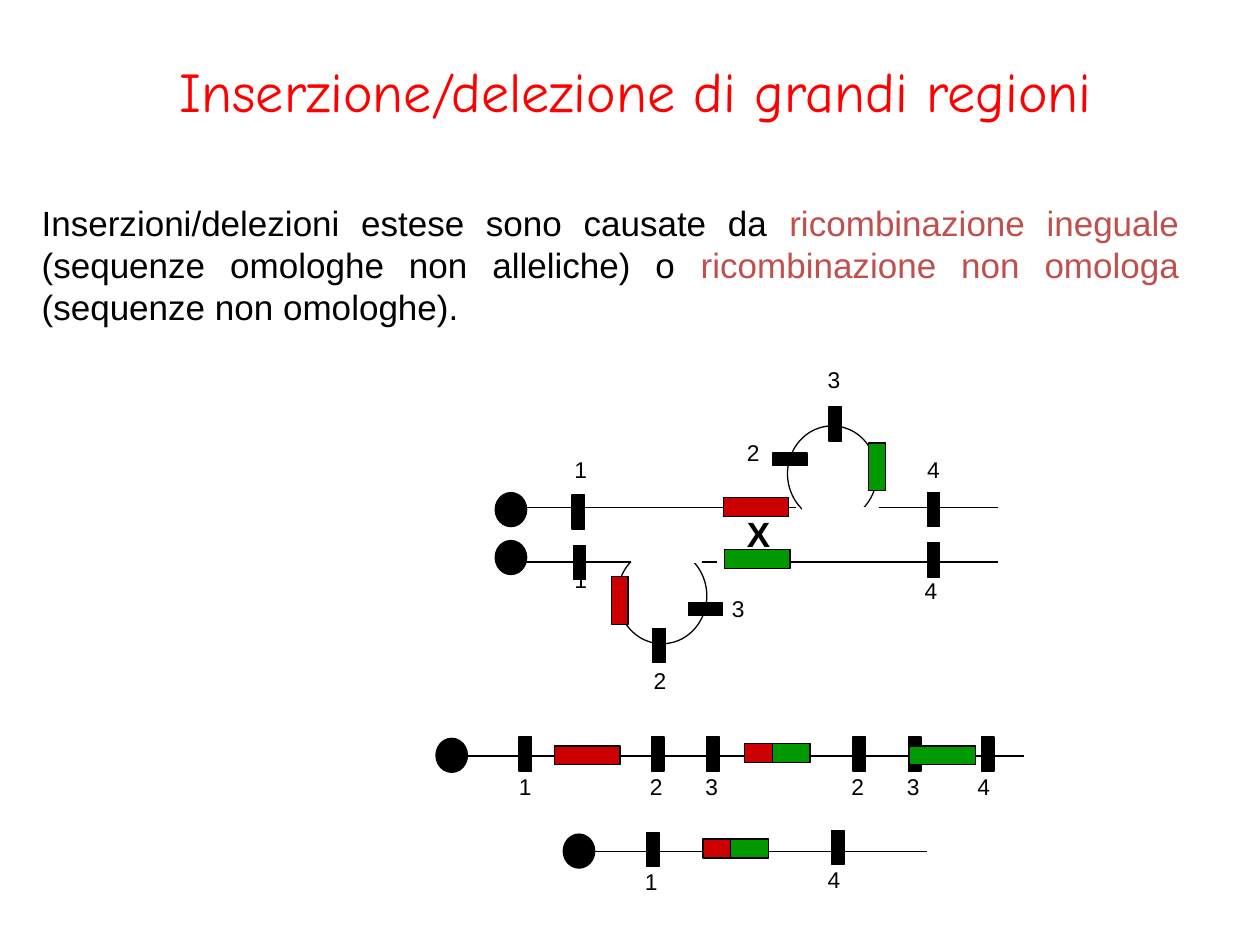
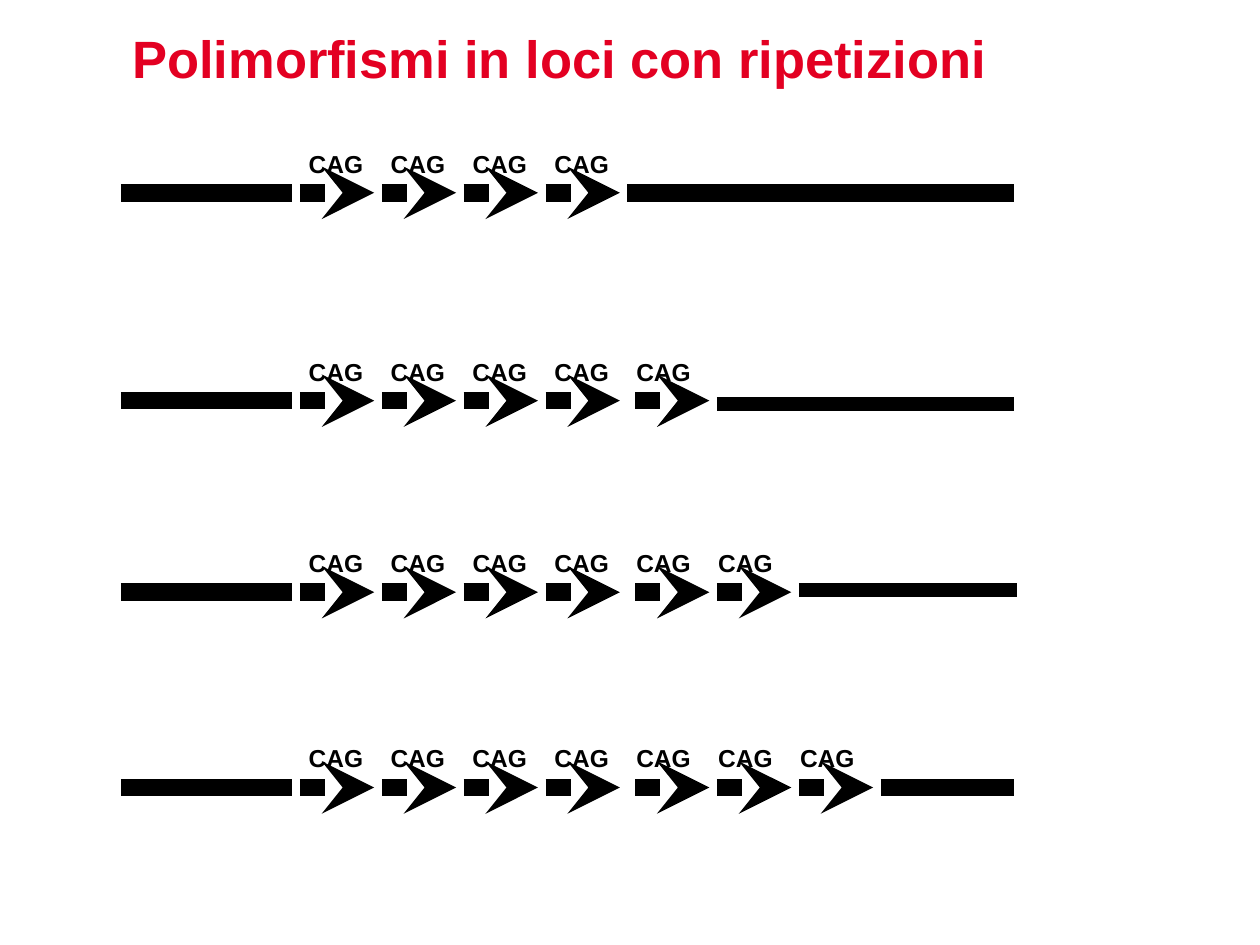
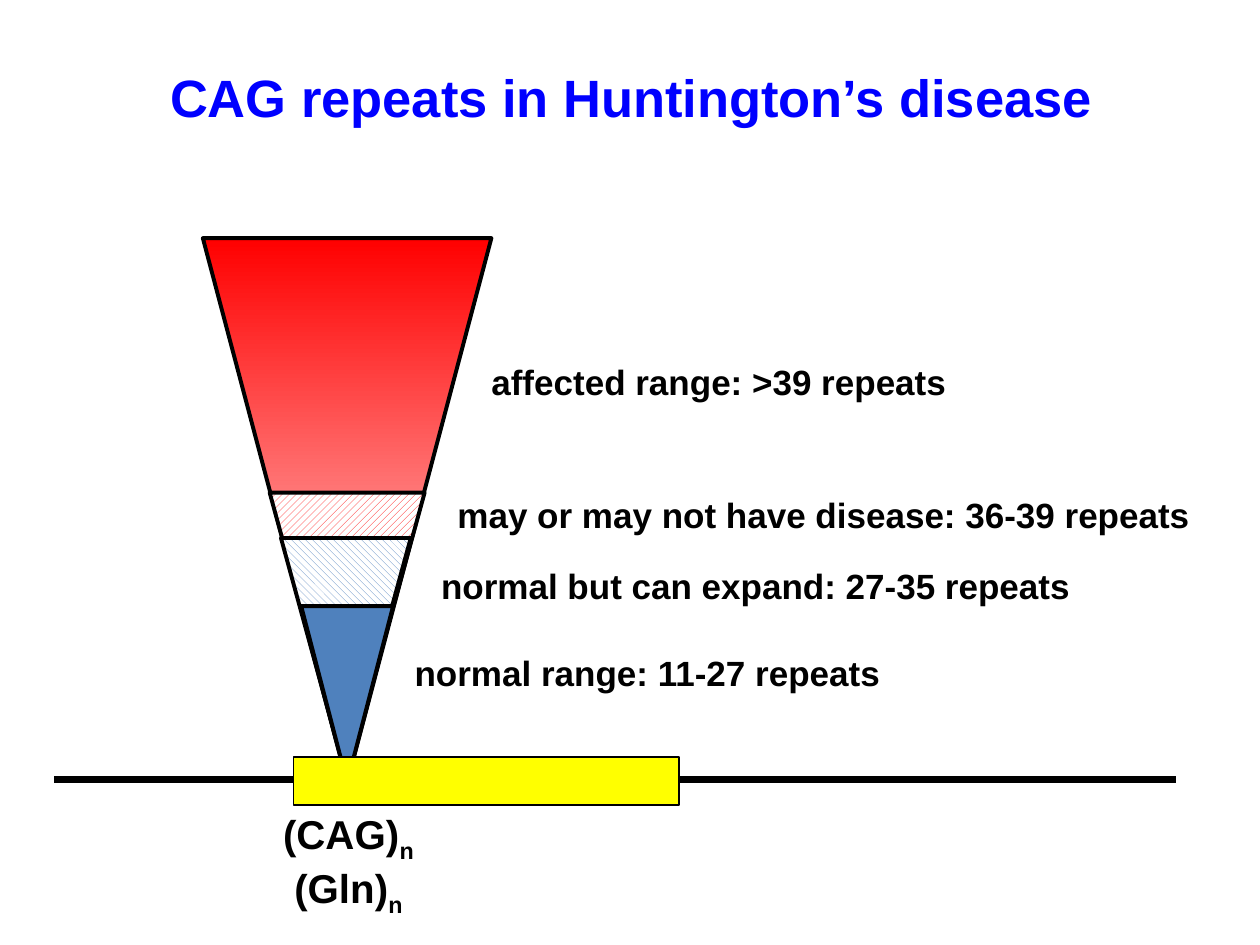
from lxml import etree
from pptx import Presentation
from pptx.dml.color import RGBColor
from pptx.enum.dml import MSO_PATTERN
from pptx.enum.shapes import MSO_CONNECTOR, MSO_SHAPE
from pptx.enum.text import MSO_AUTO_SIZE, PP_ALIGN
from pptx.oxml.ns import qn
from pptx.util import Emu, Pt

PX = 9144  # one px is a hundredth of an inch
RECT, OVAL, TRIANGLE = MSO_SHAPE.RECTANGLE, MSO_SHAPE.OVAL, MSO_SHAPE.ISOSCELES_TRIANGLE
STRAIGHT = MSO_CONNECTOR.STRAIGHT
UP_DIAGONAL, DOWN_DIAGONAL = MSO_PATTERN.WIDE_UPWARD_DIAGONAL, MSO_PATTERN.WIDE_DOWNWARD_DIAGONAL
LEFT, CENTER, JUSTIFY = PP_ALIGN.LEFT, PP_ALIGN.CENTER, PP_ALIGN.JUSTIFY
FIT_TEXT = MSO_AUTO_SIZE.SHAPE_TO_FIT_TEXT

BLACK, WHITE, YELLOW = "000000", "FFFFFF", "FFFF00"
RED, CRIMSON, BLUE = "FF0000", "E30022", "0000FF"
GENE_RED, GENE_GREEN = "CC0000", "009900"
ACCENT_RED, ACCENT_BLUE = "C0504D", "4F81BD"


def px(length):
    return Emu(length * PX)


def color(code):
    return RGBColor.from_string(code)


class Deck:
    def __init__(self, width, height):
        self.deck = Presentation()
        self.deck.slide_width, self.deck.slide_height = px(width), px(height)
        self.font = "Arial"
        self.page = None

    def new_page(self):
        self.page = self.deck.slides.add_slide(self.deck.slide_layouts[6])

    def text(self, at, paras, size, bold=False, ink=BLACK, font=None, align=LEFT,
             inset=(9, 5), wrap=False, fill=None, tabs=()):
        """Each paragraph is a list of (text, colour or None, baseline) spans."""
        box = self.page.shapes.add_textbox(*map(px, at))
        if fill:
            box.fill.solid()
            box.fill.fore_color.rgb = color(fill)
        frame = box.text_frame
        frame.word_wrap = wrap
        frame.auto_size = FIT_TEXT
        frame.margin_left = frame.margin_right = px(inset[0])
        frame.margin_top = frame.margin_bottom = px(inset[1])
        for index, spans in enumerate(paras):
            para = frame.add_paragraph() if index else frame.paragraphs[0]
            para.alignment = align
            if tabs:
                stops = etree.SubElement(para._p.get_or_add_pPr(), qn("a:tabLst"))
                for stop in tabs:
                    etree.SubElement(stops, qn("a:tab"), pos=str(px(stop)), algn="l")
            for words, span_ink, baseline in spans:
                span = para.add_run()
                span.text = words
                span.font.name = font or self.font
                span.font.size = Pt(size)
                span.font.bold = bold
                span.font.color.rgb = color(span_ink or ink)
                if baseline:
                    span._r.get_or_add_rPr().set("baseline", str(baseline * 1000))

    def label(self, words, at, size, **style):
        self.text(at, [[(words, None, 0)]], size, **style)

    def shape(self, kind, at, fill, line=BLACK, weight=0.75, turn=0):
        shape = self.page.shapes.add_shape(kind, *map(px, at))
        shape.shadow.inherit = False
        shape.rotation = turn
        shape.line.color.rgb = color(line)
        shape.line.width = Pt(weight)
        if fill:
            shape.fill.solid()
            shape.fill.fore_color.rgb = color(fill)
        return shape

    def fade(self, shape, first, last):
        shape.fill.gradient()
        shape.fill.gradient_angle = 270
        for stop, code, place in zip(shape.fill.gradient_stops, (first, last), (0, 1)):
            stop.color.rgb = color(code)
            stop.position = place
        shape._element.spPr.find(qn("a:gradFill")).set("rotWithShape", "0")

    def hatch(self, shape, pattern, ink):
        shape.fill.patterned()
        shape.fill.pattern = pattern
        shape.fill.fore_color.rgb = color(ink)
        shape.fill.back_color.rgb = color(WHITE)

    def line(self, start, end, y, weight, arrow=False):
        line = self.page.shapes.add_connector(STRAIGHT, px(start), px(y), px(end), px(y))
        line.line.color.rgb = color(BLACK)
        line.line.width = Pt(weight)
        if arrow:
            etree.SubElement(line.line._get_or_add_ln(), qn("a:tailEnd"), type="stealth")
        etree.SubElement(line._element.spPr, qn("a:effectLst"))

    # Parts of a chromosome
    def number(self, words, x, y):
        self.label(words, (x, y, 30, 32), 13, inset=(10, 5))

    def marker(self, x, y, turn=0):
        self.shape(RECT, (x, y, 10, 27), BLACK, turn=turn)

    def centromere(self, x, y):
        self.shape(OVAL, (x, y, 25, 27), BLACK)

    def repeat(self, x, y, fill):
        self.shape(RECT, (x, y, 52, 15), fill)

    def product(self, left, right, y, hybrid_x, hybrid_y, loci):
        """A recombined chromosome; loci are (number, marker x, marker y, number x)."""
        self.line(left + 16, right, y, 0.75)
        self.centromere(left, y - 14)
        for words, x, top, number_x in loci:
            self.marker(x, top)
            self.number(words, number_x, top + 23)
        self.shape(RECT, (hybrid_x, hybrid_y, 43, 15), GENE_RED)
        self.shape(RECT, (hybrid_x + 22, hybrid_y, 30, 15), GENE_GREEN)


def unequal_recombination(deck):
    deck.new_page()
    deck.label("Inserzione/delezione di grandi regioni", (86, 40, 838, 63), 32,
               ink=RED, font="Comic Neue", align=CENTER)

    # Lower chromatid with its loop
    deck.shape(OVAL, (490, 435, 71, 76), WHITE)
    deck.line(626, 792, 446, 0.75)
    deck.repeat(575, 436, GENE_GREEN)
    deck.marker(518, 499)
    deck.marker(555, 470, turn=270)
    deck.shape(RECT, (473, 470, 38, 13), GENE_RED, turn=270)
    deck.line(409, 569, 446, 0.75)
    deck.marker(455, 433)
    deck.marker(736, 431)

    # Upper chromatid with its loop
    deck.line(404, 632, 403, 0.75)
    deck.marker(454, 393)
    deck.repeat(574, 395, GENE_RED)
    deck.shape(OVAL, (625, 338, 71, 76), WHITE)
    deck.marker(658, 323)
    deck.marker(622, 351, turn=90)
    deck.shape(RECT, (677, 364, 38, 13), GENE_GREEN, turn=90)
    deck.line(689, 792, 403, 0.75)
    deck.marker(736, 391)

    # Openings of the loops, centromeres and crossover
    for opening in ((501, 412, 56, 34), (637, 403, 60, 19)):
        deck.shape(RECT, opening, WHITE, line=WHITE)
    for y in (391, 429):
        deck.centromere(393, y)
    deck.label("X", (583, 402, 39, 44), 20, bold=True, inset=(10, 5))
    for words, x, y in (("1", 446, 357), ("1", 446, 444), ("2", 509, 524), ("3", 571, 467),
                        ("4", 724, 453), ("2", 583, 343), ("3", 647, 285), ("4", 726, 357)):
        deck.number(words, x, y)

    # Products: duplication and deletion
    deck.product(346, 813, 600, 591, 590, (
        ("1", 412, 585, 402), ("2", 517, 585, 506), ("3", 561, 585, 550),
        ("2", 677, 585, 666), ("3", 721, 585, 710), ("4", 779, 585, 766)))
    deck.repeat(440, 592, GENE_RED)
    deck.repeat(722, 592, GENE_GREEN)
    deck.product(447, 736, 676, 558, 666, (("1", 513, 661, 502), ("4", 660, 659, 647)))

    # Explanation
    deck.text((24, 155, 921, 110), [[
        ("Inserzioni/delezioni estese sono causate da ", None, 0),
        ("ricombinazione ineguale", ACCENT_RED, 0),
        (" (sequenze omologhe non alleliche) o ", None, 0),
        ("ricombinazione non omologa", ACCENT_RED, 0),
        (" (sequenze non omologhe).", None, 0)]], 20, align=JUSTIFY, wrap=True)


def repeat_polymorphisms(deck):
    deck.new_page()
    deck.label("Polimorfismi in loci con ripetizioni", (96, 16, 709, 60), 30,
               bold=True, ink=CRIMSON)
    pitch = 65
    # Alleles: repeats, y, then y, end and weight of the right flank
    for count, y, flank_y, flank_end, weight in (
            (4, 153, 153, 805, 10), (5, 318, 321, 805, 8),
            (6, 470, 468, 807, 8), (7, 625, 625, 805, 10)):
        deck.line(96, 232, y, 10)
        for index in range(count):
            x = 238 + pitch * index + (6 if index > 3 else 0)
            deck.line(x, x + 59, y, 10, arrow=True)
        deck.line(x + pitch, flank_end, flank_y, weight)
        deck.label("\t".join(["CAG"] * count), (237, y - 39, pitch * count + 5, 31), 14,
                   bold=True, inset=(8, 4), wrap=True,
                   tabs=[pitch * index for index in range(1, count)])


def huntington_repeats(deck):
    deck.new_page()
    deck.label("CAG repeats in Huntington’s disease", (126, 47, 773, 60), 30,
               bold=True, ink=BLUE)
    deck.label("affected range: >39 repeats", (381, 281, 383, 43), 20, bold=True, fill=WHITE)

    # Nested cones, widest first, over the gene
    cone = {"line": BLACK, "weight": 2.25, "turn": 180}
    deck.fade(deck.shape(TRIANGLE, (161, 189, 229, 432), None, **cone), RED, WHITE)
    deck.hatch(deck.shape(TRIANGLE, (214, 391, 123, 224), None, **cone), UP_DIAGONAL, RED)
    deck.line(43, 933, 619, 4)
    deck.hatch(deck.shape(TRIANGLE, (223, 427, 103, 188), None, **cone),
               DOWN_DIAGONAL, ACCENT_BLUE)
    deck.shape(TRIANGLE, (239, 481, 73, 140), ACCENT_BLUE, **cone)
    deck.shape(RECT, (233, 601, 306, 38), YELLOW, weight=1)

    # Ranges
    for words, x, y, width in (
            ("may or may not have disease: 36-39 repeats", 354, 387, 605),
            ("normal but can expand: 27-35 repeats", 341, 443, 522),
            ("normal range: 11-27 repeats", 320, 512, 391)):
        deck.label(words, (x, y, width, 43), 20, bold=True)
    deck.text((214, 637, 125, 87),
              [[(unit, None, 0), ("n", None, -25)] for unit in ("(CAG)", "(Gln)")],
              23, bold=True, align=CENTER, wrap=True)


def main():
    deck = Deck(1000, 750)
    unequal_recombination(deck)
    repeat_polymorphisms(deck)
    huntington_repeats(deck)
    deck.deck.save("out.pptx")


if __name__ == "__main__":
    main()
